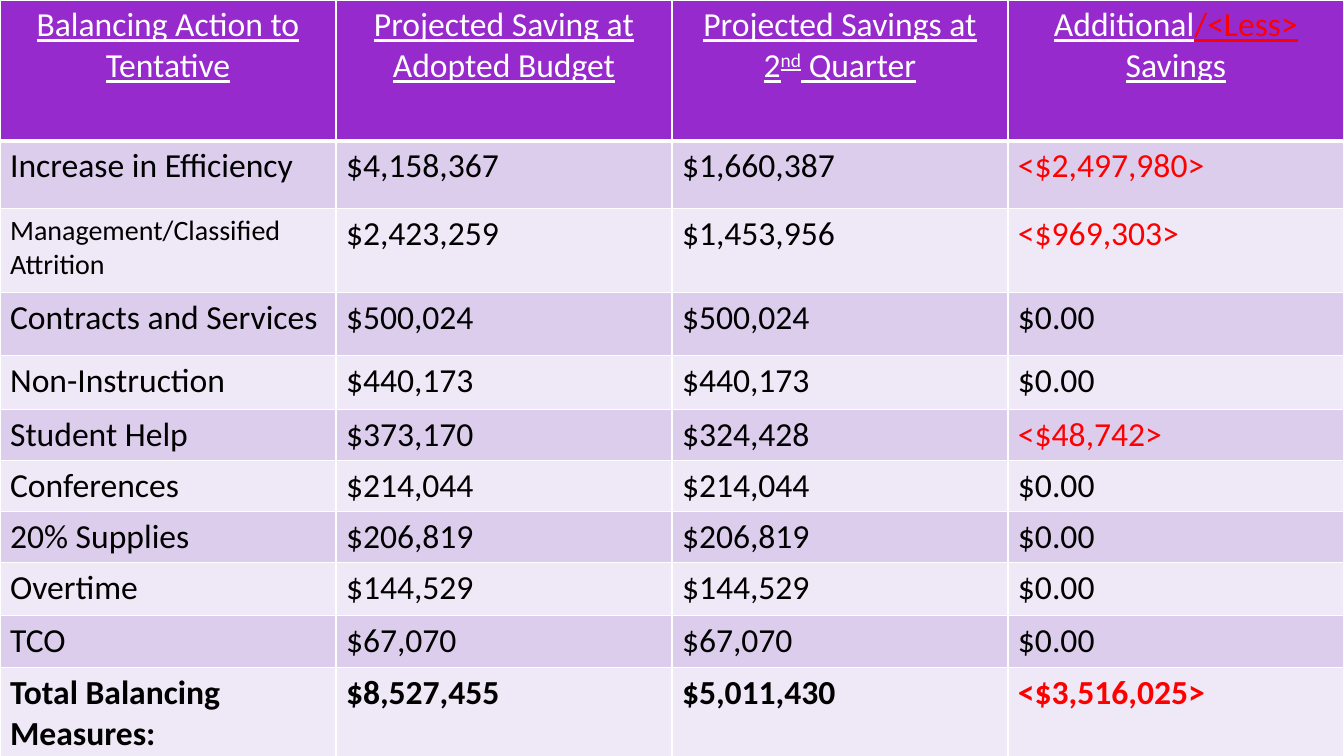
from dataclasses import dataclass

from lxml import etree
from pptx import Presentation
from pptx.dml.color import RGBColor
from pptx.enum import text as txt
from pptx.oxml import ns
from pptx.util import Pt

WHITE, BLACK, RED = "FFFFFF", "000000", "FF0000"
PURPLE, LILAC, PALE_LILAC = "972ACD", "DDCDED", "EFE8F6"
SLIDE_WIDTH, SLIDE_HEIGHT = 960, 540


@dataclass
class Saving:
    action: str
    adopted: str
    second_quarter: str
    change: str
    height: float
    action_size: float = 24
    bold: bool = False


SAVINGS = [
    Saving("Increase in Efficiency", "$4,158,367", "$1,660,387", "<$2,497,980>", 48.5),
    Saving("Management/Classified Attrition", "$2,423,259", "$1,453,956", "<$969,303>",
           60, action_size=20),
    Saving("Contracts and Services", "$500,024", "$500,024", "$0.00", 45),
    Saving("Non-Instruction", "$440,173", "$440,173", "$0.00", 38.5),
    Saving("Student Help", "$373,170", "$324,428", "<$48,742>", 34),
    Saving("Conferences", "$214,044", "$214,044", "$0.00", 36.5),
    Saving("20% Supplies", "$206,819", "$206,819", "$0.00", 34),
    Saving("Overtime", "$144,529", "$144,529", "$0.00", 37.5),
    Saving("TCO", "$67,070", "$67,070", "$0.00", 37.5),
    Saving("Total Balancing Measures:", "$8,527,455", "$5,011,430", "<$3,516,025>", 68,
           bold=True),
]
HEADER_HEIGHT = 100.5
HEADINGS = [
    [("Balancing Action to Tentative", {})],
    [("Projected Saving at Adopted Budget", {})],
    [("Projected Savings at 2", {}), ("nd", {"raised": True}), (" Quarter", {})],
    [("Additional", {}), ("/<Less> ", {"color": RED}), ("Savings", {})],
]


def rgb(color: str) -> RGBColor:
    return RGBColor.from_string(color)


def add_text(paragraph, words: str, *, size: float = 24, color: str = BLACK,
             bold: bool = False, underline: bool = False, raised: bool = False) -> None:
    run = paragraph.add_run()
    run.text = words
    font = run.font
    font.name, font.size = "Calibri", Pt(size)
    font.bold, font.underline = bold, underline
    font.color.rgb = rgb(color)
    if raised:
        run._r.get_or_add_rPr().set("baseline", "30000")


def style_cell(cell, fill: str, top: float = 1, bottom: float = 1) -> None:
    """Set white borders, then the fill, which must follow them in the XML."""
    properties = cell._tc.get_or_add_tcPr()
    for side, width in (("L", 1), ("R", 1), ("T", top), ("B", bottom)):
        border = etree.SubElement(properties, ns.qn(f"a:ln{side}"), w=str(Pt(width)))
        solid = etree.SubElement(border, ns.qn("a:solidFill"))
        etree.SubElement(solid, ns.qn("a:srgbClr"), val=WHITE)
    cell.fill.solid()
    cell.fill.fore_color.rgb = rgb(fill)


def fill_header(table) -> None:
    table.rows[0].height = Pt(HEADER_HEIGHT)
    for column, heading in enumerate(HEADINGS):
        cell = table.cell(0, column)
        style_cell(cell, PURPLE, bottom=3)
        paragraph = cell.text_frame.paragraphs[0]
        paragraph.alignment = txt.PP_ALIGN.CENTER
        for words, changes in heading:
            add_text(paragraph, words, **{"color": WHITE, "underline": True, **changes})


def fill_saving(table, row: int, saving: Saving) -> None:
    table.rows[row].height = Pt(saving.height)
    entries = (saving.action, saving.adopted, saving.second_quarter, saving.change)
    for column, entry in enumerate(entries):
        cell = table.cell(row, column)
        style_cell(cell, LILAC if row % 2 else PALE_LILAC, top=3 if row == 1 else 1)
        add_text(cell.text_frame.paragraphs[0], entry,
                 size=saving.action_size if column == 0 else 24,
                 color=RED if entry.startswith("<") else BLACK, bold=saving.bold)


def main() -> None:
    deck = Presentation()
    deck.slide_width, deck.slide_height = Pt(SLIDE_WIDTH), Pt(SLIDE_HEIGHT)
    slide = deck.slides.add_slide(deck.slide_layouts[6])
    slide.background.fill.solid()
    slide.background.fill.fore_color.rgb = rgb(BLACK)

    height = HEADER_HEIGHT + sum(saving.height for saving in SAVINGS)
    table = slide.shapes.add_table(len(SAVINGS) + 1, len(HEADINGS), Pt(0), Pt(0),
                                   Pt(SLIDE_WIDTH), Pt(height)).table
    table.first_row = table.horz_banding = False
    fill_header(table)
    for row, saving in enumerate(SAVINGS, start=1):
        fill_saving(table, row, saving)
    deck.save("out.pptx")


if __name__ == "__main__":
    main()
